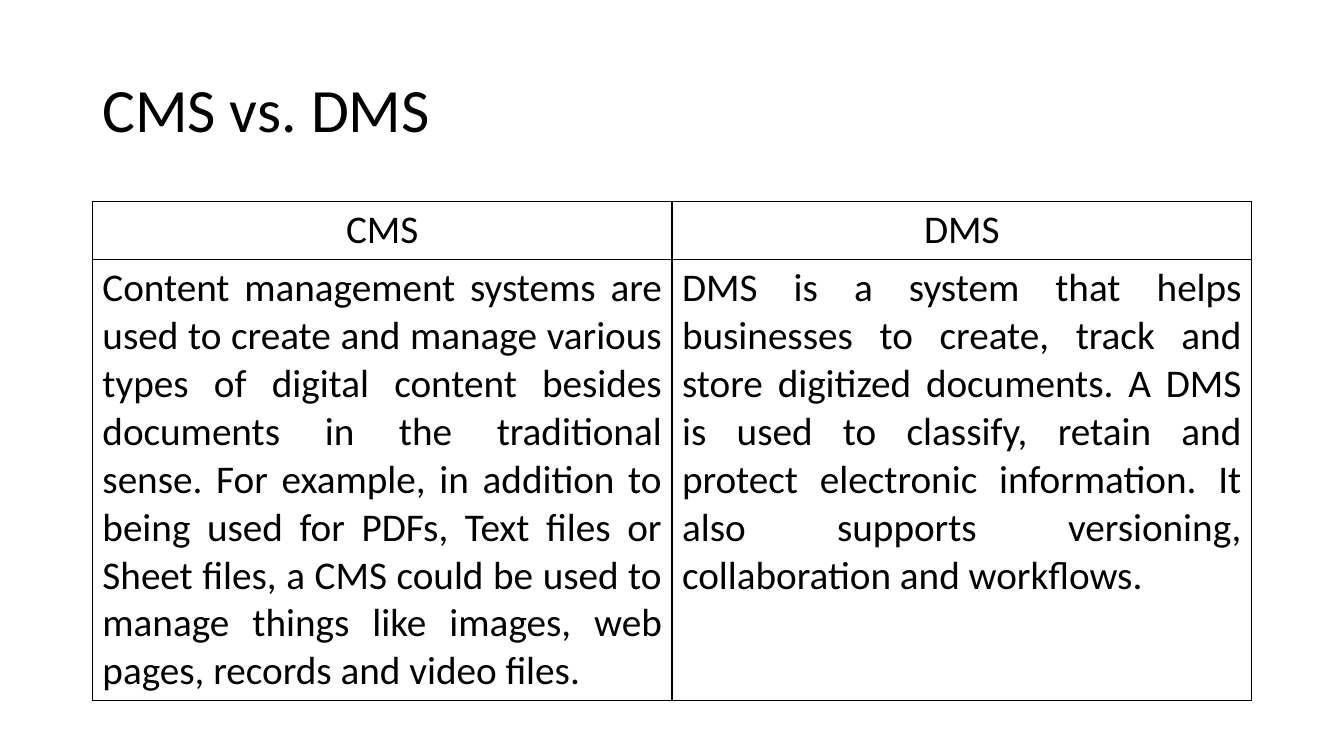
from lxml import etree
from pptx import Presentation
from pptx import util as u
from pptx.dml.color import RGBColor
from pptx.enum import text
from pptx.oxml.ns import qn

EMU_PER_PX = 9525
COLORS = {"background": "FFFFFF", "text": "000000", "border": "000000"}
FONT = "Calibri"
COLUMNS = {
    "CMS": "Content management systems are used to create and manage various types of "
           "digital content besides documents in the traditional sense. For example, in "
           "addition to being used for PDFs, Text files or Sheet files, a CMS could be used "
           "to manage things like images, web pages, records and video files.",
    "DMS": "DMS is a system that helps businesses to create, track and store digitized "
           "documents. A DMS is used to classify, retain and protect electronic "
           "information. It also supports versioning, collaboration and workflows.",
}


def px(value):
    return u.Emu(value * EMU_PER_PX)


def color(name):
    return RGBColor.from_string(COLORS[name])


def apply_format(target, values):
    for name, value in values.items():
        setattr(target, name, value)


def write_text(frame, content, size, paragraph_format):
    paragraph = frame.paragraphs[0]
    apply_format(paragraph, paragraph_format)
    run = paragraph.add_run()
    run.text = content
    apply_format(run.font, {"name": FONT, "size": u.Pt(size), "bold": False})
    run.font.color.rgb = color("text")


def add_title(slide, content, left, top, width, height):
    shape = slide.shapes.add_textbox(*map(px, (left, top, width, height)))
    apply_format(shape.text_frame, {
        "word_wrap": True,
        "vertical_anchor": text.MSO_ANCHOR.MIDDLE,
    })
    write_text(shape.text_frame, content, 44, {"line_spacing": 0.9})


def add_borders(cell):
    properties = cell._tc.get_or_add_tcPr()
    for index, side in enumerate(("lnL", "lnR", "lnT", "lnB")):
        line = etree.Element(qn(f"a:{side}"), w=str(u.Pt(1)))
        fill = etree.SubElement(line, qn("a:solidFill"))
        etree.SubElement(fill, qn("a:srgbClr"), val=COLORS["border"])
        properties.insert(index, line)


def add_comparison(slide, columns, left, top, width, row_heights):
    frame = slide.shapes.add_table(
        len(row_heights), len(columns),
        *map(px, (left, top, width, sum(row_heights))))
    table = frame.table
    apply_format(table, {"first_row": False, "horz_banding": False})
    for row, height in zip(table.rows, row_heights):
        row.height = px(height)
    alignments = (text.PP_ALIGN.CENTER, text.PP_ALIGN.JUSTIFY)
    for column, contents in enumerate(columns.items()):
        for row, (content, alignment) in enumerate(zip(contents, alignments)):
            cell = table.cell(row, column)
            cell.fill.background()
            add_borders(cell)
            write_text(cell.text_frame, content, 28, {"alignment": alignment})


def main():
    presentation = Presentation()
    apply_format(presentation, {"slide_width": px(1280), "slide_height": px(720)})
    slide = presentation.slides.add_slide(presentation.slide_layouts[6])
    slide.background.fill.solid()
    slide.background.fill.fore_color.rgb = color("background")
    add_title(slide, "CMS vs. DMS", 88, 38, 1104, 139)
    add_comparison(slide, COLUMNS, 88, 192, 1104, (55, 420))
    presentation.save("out.pptx")


if __name__ == "__main__":
    main()
